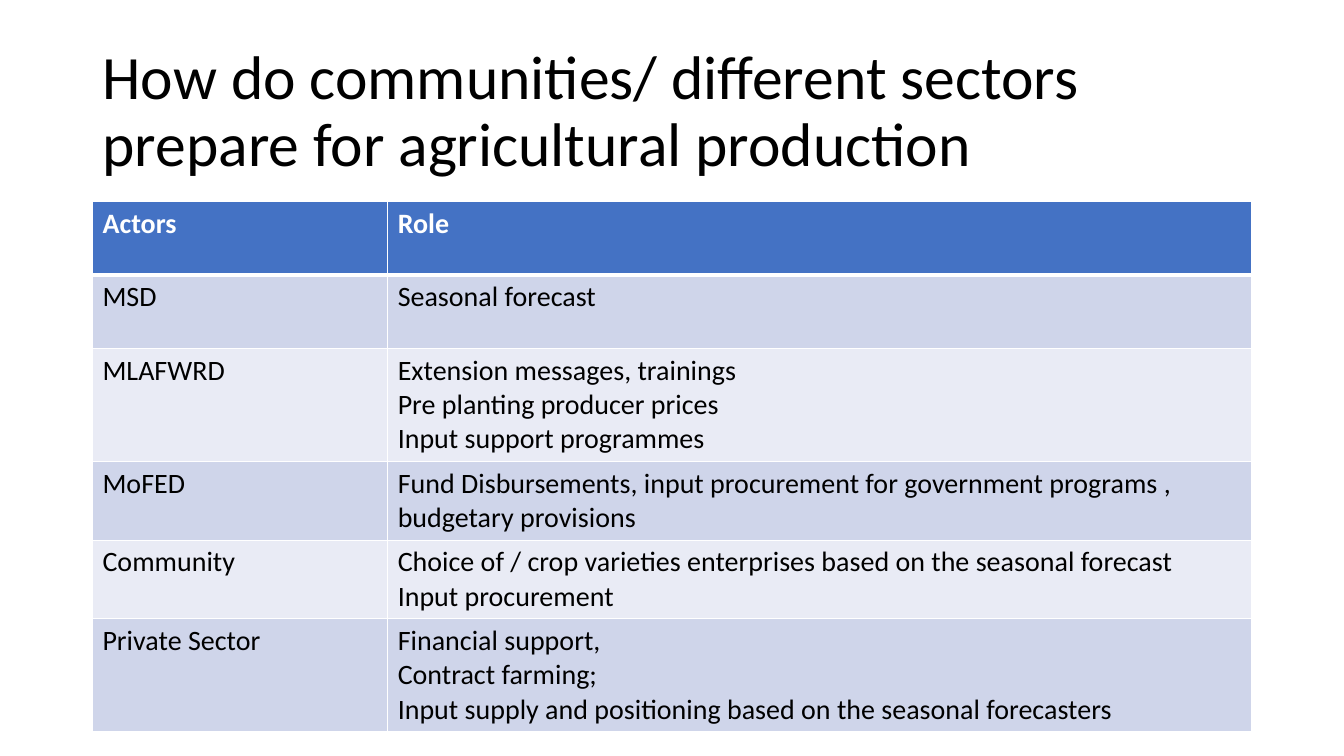
from pptx import Presentation
from pptx.dml.color import RGBColor
from pptx.enum.text import MSO_ANCHOR, MSO_AUTO_SIZE, PP_ALIGN
from pptx.oxml import parse_xml
from pptx.oxml.ns import nsdecls
from pptx.util import Cm, Pt

COLORS = {
    "header": "4472C4",
    "odd": "CFD5EA",
    "even": "E9EBF5",
    "white": "FFFFFF",
    "black": "000000",
}
ROWS = [
    ("Actors", ["Role"]),
    ("MSD", ["Seasonal forecast"]),
    ("MLAFWRD", ["Extension messages, trainings",
                 "Pre planting producer prices",
                 "Input support programmes"]),
    ("MoFED", ["Fund Disbursements, input procurement for government programs , "
               "budgetary provisions"]),
    ("Community", ["Choice of / crop varieties enterprises based on the seasonal forecast",
                   "Input procurement"]),
    ("Private Sector", ["Financial support,",
                        "Contract farming;",
                        "Input supply and positioning based on the seasonal forecasters"]),
]
COLUMN_WIDTHS = [Cm(7.44), Cm(21.77)]
ROW_HEIGHT = Cm(1.85)
LEFT, WIDTH = Cm(2.33), Cm(29.21)


def format_font(font, size, color, bold=False):
    values = {"name": "Calibri", "size": Pt(size), "bold": bold}
    for name, value in values.items():
        setattr(font, name, value)
    font.color.rgb = RGBColor.from_string(COLORS[color])


def style_cell(cell, fill, bottom_width):
    """Give the cell white borders and a solid fill."""
    properties = cell._tc.get_or_add_tcPr()
    for side in ("L", "R", "T", "B"):
        width = Pt(bottom_width if side == "B" else 1)
        properties.append(parse_xml(
            f'<a:ln{side} {nsdecls("a")} w="{width}"><a:solidFill>'
            f'<a:srgbClr val="{COLORS["white"]}"/></a:solidFill></a:ln{side}>'))
    cell.fill.solid()
    cell.fill.fore_color.rgb = RGBColor.from_string(COLORS[fill])


deck = Presentation()
deck.slide_width, deck.slide_height = Cm(33.87), Cm(19.05)
page = deck.slides.add_slide(deck.slide_layouts[5])

title = page.shapes.title
title.left, title.top, title.width, title.height = LEFT, Cm(1.01), WIDTH, Cm(3.68)
title.text_frame.text = "How do communities/ different sectors prepare for agricultural production"
title.text_frame.auto_size = MSO_AUTO_SIZE.NONE
title.text_frame.vertical_anchor = MSO_ANCHOR.MIDDLE
heading = title.text_frame.paragraphs[0]
heading.alignment = PP_ALIGN.LEFT
heading.line_spacing = 0.9
format_font(heading.runs[0].font, 44, "black")

table = page.shapes.add_table(len(ROWS), len(COLUMN_WIDTHS), LEFT, Cm(5.08),
                              WIDTH, ROW_HEIGHT * len(ROWS)).table
for column, width in zip(table.columns, COLUMN_WIDTHS):
    column.width = width

for index, (actor, roles) in enumerate(ROWS):
    table.rows[index].height = ROW_HEIGHT
    is_header = index == 0
    fill = "header" if is_header else "odd" if index % 2 else "even"
    for cell, lines in zip(table.rows[index].cells, ([actor], roles)):
        cell.text = "\n".join(lines)
        style_cell(cell, fill, 3 if is_header else 1)
        for para in cell.text_frame.paragraphs:
            format_font(para.runs[0].font, 20, "white" if is_header else "black", is_header)

deck.save("out.pptx")
